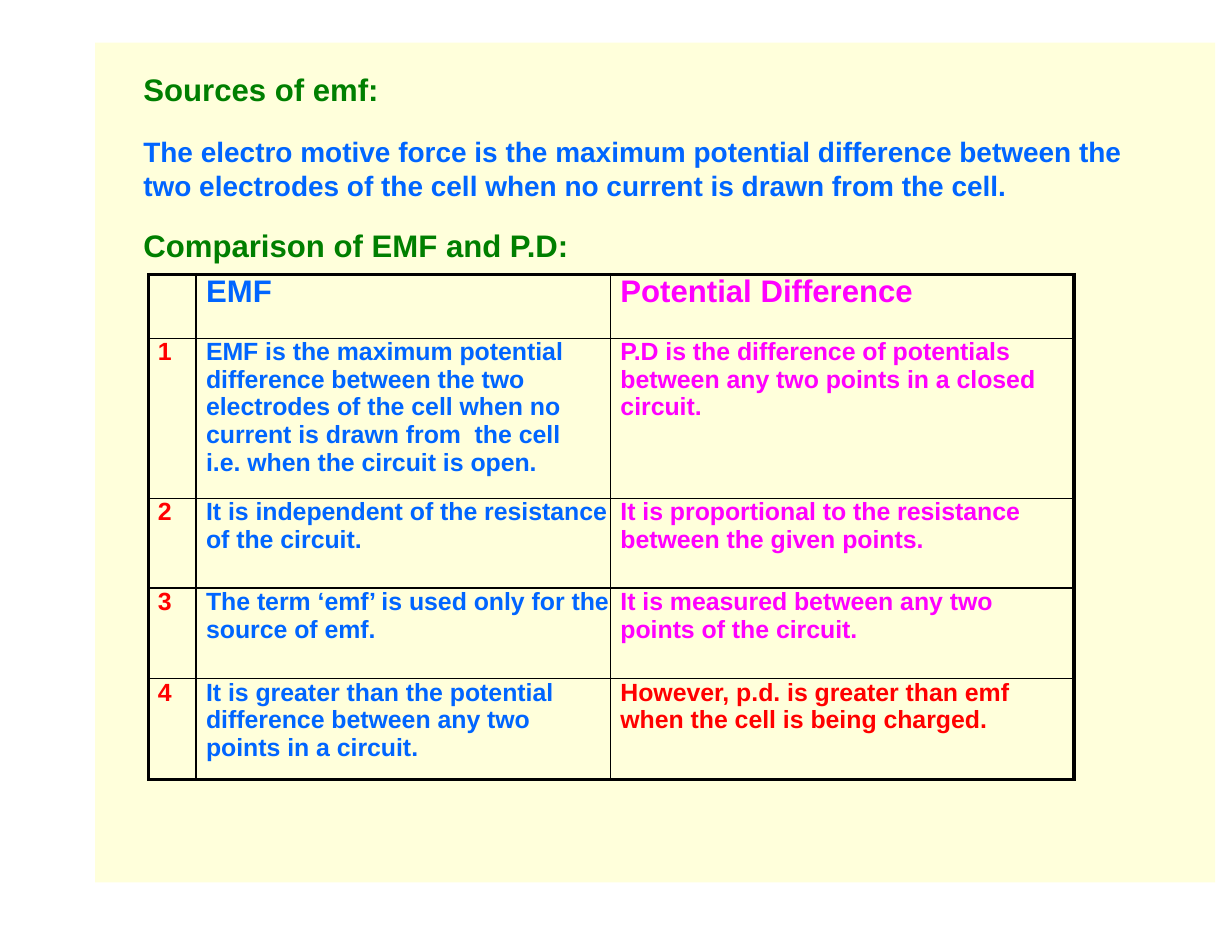
from dataclasses import dataclass
import pptx
import pptx.dml.color
import pptx.enum.shapes
import pptx.enum.text
import pptx.oxml
import pptx.oxml.ns
import pptx.util

RGB = pptx.dml.color.RGBColor
CREAM = RGB(0xFF, 0xFF, 0xDB)
GREEN = RGB(0x00, 0x7F, 0x00)
BLUE = RGB(0x00, 0x65, 0xFF)
PINK = RGB(0xFF, 0x00, 0xFF)
RED = RGB(0xFF, 0x00, 0x00)
BLACK = RGB(0x00, 0x00, 0x00)

# Slide grid: 44 columns by 34 rows
WIDE = pptx.util.Inches(11)
HIGH = pptx.util.Inches(8.5)
THICK, THIN = 2.25, 1


def across(cols: float) -> int:
    return round(WIDE * cols / 44)


def down(rows: float) -> int:
    return round(HIGH * rows / 34)


@dataclass
class Box:
    x: float
    y: float
    w: float
    h: float

    def place(self) -> tuple[int, int, int, int]:
        return across(self.x), down(self.y), across(self.w), down(self.h)


@dataclass
class Row:
    high: float
    mark: str
    left: list[str]
    right: list[str]
    size: int = 16
    tint: RGB = PINK


PANEL = Box(3.4, 1.52, 40, 30)
HEAD = Box(5.08, 2.52, 35.6, 1.3)
BODY = Box(5.08, 4.8, 35.6, 4.6)
GRID = Box(5.32, 9.8, 33.04, 18.04)
COLS = (1.68, 14.8, 16.56)
ROWS = [
    Row(2.28, "", ["EMF"], ["Potential Difference"], size=20),
    Row(5.72, "1",
        ["EMF is the maximum potential difference between the two electrodes "
         "of the cell when no current is drawn from  the cell",
         "i.e. when the circuit is open."],
        ["P.D is the difference of potentials between any two points in a "
         "closed circuit."]),
    Row(3.2, "2", ["It is independent of the resistance of the circuit."],
        ["It is proportional to the resistance between the given points."]),
    Row(3.24, "3", ["The term ‘emf’ is used only for the source of emf."],
        ["It is measured between any two points of the circuit."]),
    Row(3.6, "4",
        ["It is greater than the potential difference between any two points "
         "in a circuit."],
        ["However, p.d. is greater than emf when the cell is being charged."],
        tint=RED),
]


def write(frame, text: str, *, size: float, color: RGB, more: bool = False,
          before: float = 0, line: float = 1, indent: float = 0) -> None:
    """Write one paragraph, added after the others when more is true."""
    para = frame.add_paragraph() if more else frame.paragraphs[0]
    para.alignment = pptx.enum.text.PP_ALIGN.LEFT
    para.space_before = pptx.util.Pt(before)
    para.line_spacing = line
    run = para.add_run()
    run.text = text
    run.font.name = "Arial"
    run.font.size = pptx.util.Pt(size)
    run.font.bold = True
    run.font.color.rgb = color
    # Indent without a bullet
    props = para._p.get_or_add_pPr()
    props.set("marL", str(pptx.util.Inches(indent)))
    props.set("indent", "0")
    props.append(pptx.oxml.parse_xml(
        f"<a:buNone {pptx.oxml.ns.nsdecls('a')}/>"))


def fit(shape, box: Box):
    """Move a placeholder and clear its margins."""
    shape.left, shape.top, shape.width, shape.height = box.place()
    frame = shape.text_frame
    frame.margin_left = frame.margin_right = 0
    frame.margin_top = frame.margin_bottom = 0
    frame.word_wrap = True
    frame.auto_size = pptx.enum.text.MSO_AUTO_SIZE.NONE
    frame.vertical_anchor = pptx.enum.text.MSO_ANCHOR.TOP
    return frame


def edge(cell, **widths: float) -> None:
    """Draw the cell borders, given in the order L, R, T, B."""
    props = cell._tc.get_or_add_tcPr()
    for spot, (side, width) in enumerate(widths.items()):
        props.insert(spot, pptx.oxml.parse_xml(
            f'<a:ln{side} {pptx.oxml.ns.nsdecls("a")} '
            f'w="{pptx.util.Pt(width)}"><a:solidFill>'
            f'<a:srgbClr val="{BLACK}"/></a:solidFill></a:ln{side}>'))


def draw_panel(slide) -> None:
    panel = slide.shapes.add_shape(
        pptx.enum.shapes.MSO_SHAPE.RECTANGLE, *PANEL.place())
    panel.shadow.inherit = False
    panel.fill.solid()
    panel.fill.fore_color.rgb = CREAM
    panel.line.fill.background()
    # Send behind the placeholders
    tree = panel.element.getparent()
    tree.insert(2, panel.element)


def draw_table(slide) -> None:
    table = slide.shapes.add_table(
        len(ROWS), len(COLS), *GRID.place()).table
    table.first_row = table.horz_banding = False
    for col, wide in zip(table.columns, COLS):
        col.width = across(wide)
    for r, row in enumerate(ROWS):
        table.rows[r].height = down(row.high)
        parts = (([row.mark], RED, 0.08), (row.left, BLUE, 0.09),
                 (row.right, row.tint, 0.09))
        for c, (lines, color, indent) in enumerate(parts):
            cell = table.cell(r, c)
            cell.margin_left = cell.margin_right = 0
            cell.margin_top = cell.margin_bottom = 0
            cell.fill.solid()
            cell.fill.fore_color.rgb = CREAM
            edge(cell,
                 L=THICK if c == 0 else THIN,
                 R=THICK if c == len(COLS) - 1 else THIN,
                 T=THICK if r == 0 else THIN,
                 B=THICK if r == len(ROWS) - 1 else THIN)
            for n, text in enumerate(lines):
                if text:
                    write(cell.text_frame, text, size=row.size, color=color,
                          more=n > 0, indent=indent)


def main() -> None:
    deck = pptx.Presentation()
    deck.slide_width, deck.slide_height = WIDE, HIGH
    slide = deck.slides.add_slide(deck.slide_layouts[1])
    draw_panel(slide)

    # Heading and text
    write(fit(slide.shapes.title, HEAD), "Sources of emf:",
          size=20, color=GREEN, indent=0.01)
    body = fit(slide.placeholders[1], BODY)
    write(body, "The electro motive force is the maximum potential difference "
          "between the two electrodes of the cell when no current is drawn "
          "from the cell.", size=18, color=BLUE, line=1.01, indent=0.01)
    write(body, "Comparison of EMF and P.D:", size=20, color=GREEN,
          more=True, before=15.4, indent=0.01)

    draw_table(slide)
    deck.save("out.pptx")


if __name__ == "__main__":
    main()
